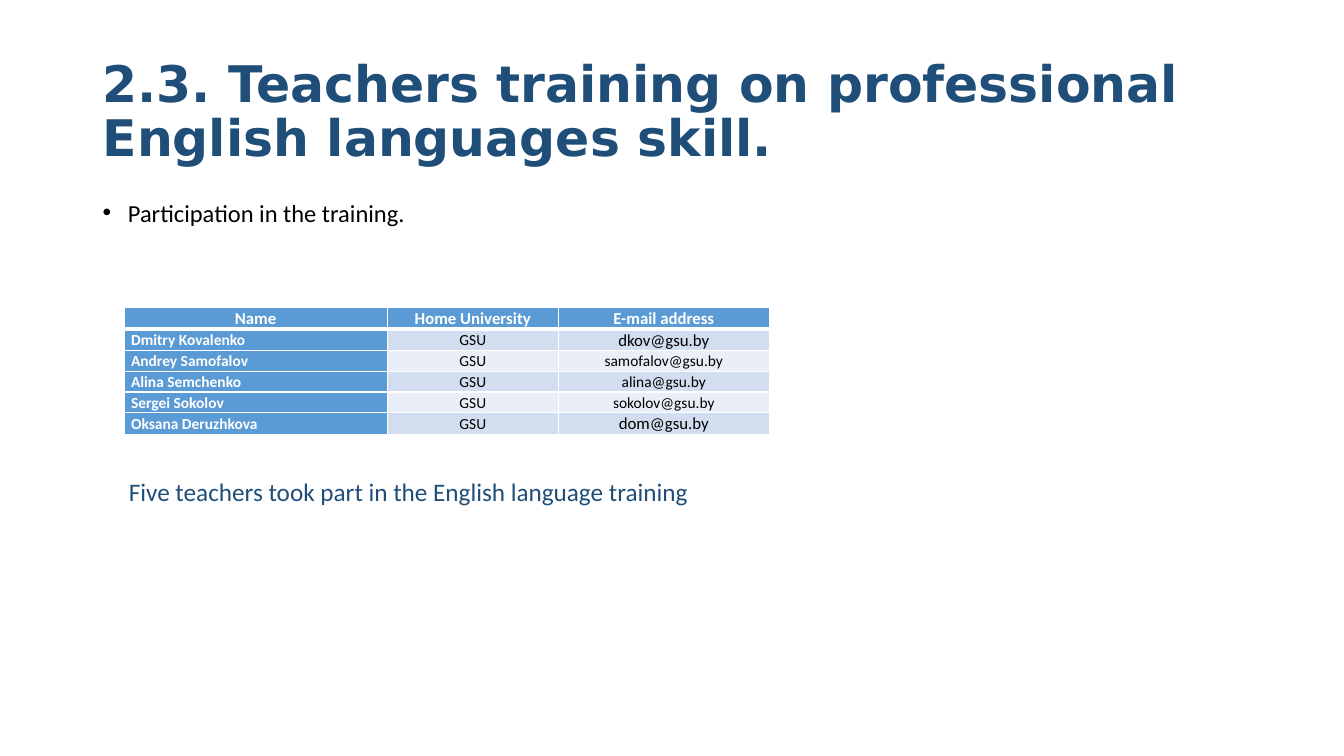
from dataclasses import dataclass

from lxml.etree import SubElement
from pptx import Presentation
from pptx.dml.color import RGBColor
from pptx.enum.text import MSO_ANCHOR, PP_ALIGN
from pptx.oxml.ns import qn
from pptx.util import Inches, Pt


@dataclass(frozen=True)
class Theme:
    width: float = 13.33
    height: float = 7.5
    title_font: str = "DejaVu Sans"
    body_font: str = "Calibri"
    navy: str = "1F4E79"
    black: str = "000000"
    white: str = "FFFFFF"
    accent: str = "5B9BD5"
    bands: tuple = ("D2DEEF", "EAEFF7")
    title_size: float = 36
    caption_size: float = 18
    bullet_size: float = 17.5
    header_size: float = 12
    cell_size: float = 11


THEME = Theme()
COLUMN_SHARES = (19.58, 12.75, 15.68)
HEADER = ("Name", "Home University", "E-mail address")
# Name, e-mail address and size of the e-mail address
TEACHERS = (
    ("Dmitry Kovalenko", "dkov@gsu.by", THEME.header_size),
    ("Andrey Samofalov", "samofalov@gsu.by", THEME.cell_size),
    ("Alina Semchenko", "alina@gsu.by", THEME.cell_size),
    ("Sergei Sokolov", "sokolov@gsu.by", THEME.cell_size),
    ("Oksana Deruzhkova", "dom@gsu.by", THEME.header_size),
)


def across(share):
    """Length of a percentage of the slide's width."""
    return Inches(THEME.width * share / 100)


def down(share):
    """Length of a percentage of the slide's height."""
    return Inches(THEME.height * share / 100)


def area(left, top, width, height):
    return across(left), down(top), across(width), down(height)


def write(tf, text, size, color, font=THEME.body_font, bold=False, **layout):
    """Fill the first paragraph; layout holds paragraph format values."""
    p = tf.paragraphs[0]
    for name, value in layout.items():
        setattr(p, name, value)
    r = p.add_run()
    r.text = text
    for name, value in {"name": font, "size": Pt(size), "bold": bold}.items():
        setattr(r.font, name, value)
    r.font.color.rgb = RGBColor.from_string(color)
    return p


def add_text(slide, box, text, size, color, wrap=True,
             anchor=MSO_ANCHOR.TOP, **style):
    tf = slide.shapes.add_textbox(*area(*box)).text_frame
    tf.word_wrap = wrap
    tf.vertical_anchor = anchor
    return write(tf, text, size, color, **style)


def add_bullet(p, indent):
    pPr = p._p.get_or_add_pPr()
    pPr.set("marL", str(indent))
    pPr.set("indent", str(-indent))
    SubElement(pPr, qn("a:buFont"), typeface="Arial")
    SubElement(pPr, qn("a:buChar"), char="•")


def add_borders(cell, top=1, bottom=1):
    tcPr = cell._tc.get_or_add_tcPr()
    for side, width in {"L": 1, "R": 1, "T": top, "B": bottom}.items():
        ln = SubElement(tcPr, qn(f"a:ln{side}"), w=str(Pt(width)))
        fill = SubElement(ln, qn("a:solidFill"))
        SubElement(fill, qn("a:srgbClr"), val=THEME.white)


def fill_cell(cell, text, size, fill, color, bold, align, anchor, **borders):
    add_borders(cell, **borders)
    cell.fill.solid()
    cell.fill.fore_color.rgb = RGBColor.from_string(fill)
    margin = Inches(0.07)
    for name, value in {"margin_left": margin, "margin_right": margin,
                        "margin_top": 0, "margin_bottom": 0,
                        "vertical_anchor": anchor}.items():
        setattr(cell, name, value)
    write(cell.text_frame, text, size, color, bold=bold, alignment=align,
          line_spacing=1.07, space_after=Pt(6))


def add_teacher_table(slide, box):
    table = slide.shapes.add_table(
        len(TEACHERS) + 1, len(HEADER), *area(*box)).table
    for column, share in zip(table.columns, COLUMN_SHARES):
        column.width = across(share)
    for row in table.rows:
        row.height = down(box[3]) // len(table.rows)

    for col, text in enumerate(HEADER):
        fill_cell(table.cell(0, col), text, THEME.header_size, THEME.accent,
                  THEME.white, True, PP_ALIGN.CENTER, MSO_ANCHOR.TOP, bottom=3)

    for row, (name, email, email_size) in enumerate(TEACHERS, start=1):
        band = THEME.bands[(row - 1) % 2]
        entries = (
            (name, THEME.cell_size, THEME.accent, THEME.white, True, PP_ALIGN.LEFT),
            ("GSU", THEME.cell_size, band, THEME.black, False, PP_ALIGN.CENTER),
            (email, email_size, band, THEME.black, False, PP_ALIGN.CENTER),
        )
        for col, entry in enumerate(entries):
            fill_cell(table.cell(row, col), *entry, MSO_ANCHOR.MIDDLE,
                      top=3 if row == 1 else 1)


def main():
    prs = Presentation()
    prs.slide_width, prs.slide_height = across(100), down(100)
    slide = prs.slides.add_slide(prs.slide_layouts[6])

    add_text(slide, (6.9, 5.33, 86.27, 19.33),
             "2.3. Teachers training on professional English languages skill.",
             THEME.title_size, THEME.navy, anchor=MSO_ANCHOR.MIDDLE,
             font=THEME.title_font, bold=True, line_spacing=0.9)
    p = add_text(slide, (6.9, 26.67, 86.27, 4.4),
                 "Participation in the training.",
                 THEME.bullet_size, THEME.black,
                 line_spacing=0.7, space_before=Pt(10))
    add_bullet(p, Inches(0.25))
    add_teacher_table(slide, (9.23, 40.67, 48.01, 16.4))
    add_text(slide, (8.85, 62.4, 43.66, 5.33),
             "Five teachers took part in the English language training",
             THEME.caption_size, THEME.navy, wrap=False)

    prs.save("out.pptx")


if __name__ == "__main__":
    main()
